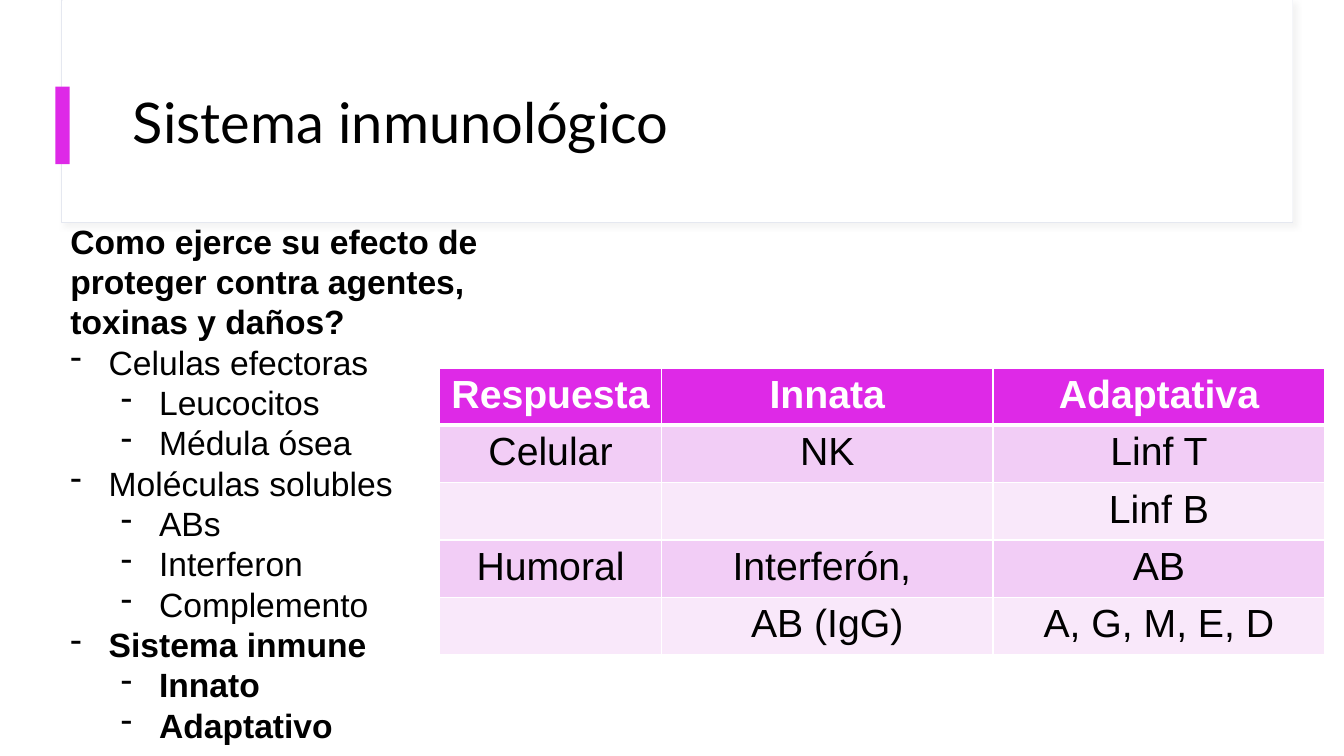
from lxml import etree
from pptx import Presentation
from pptx import util as u
from pptx.dml.color import RGBColor
from pptx.enum import shapes, text
from pptx.oxml import parse_xml
from pptx.oxml.ns import qn

COLORS = {
    "white": "FFFFFF", "black": "000000", "edge": "E5E8F0", "shade": "D9D9D9",
    "accent": "DE29E7", "dark": "F2CDF6", "light": "F9E8FA",
}
NS = 'xmlns:a="http://schemas.openxmlformats.org/drawingml/2006/main"'

# level, wording, bold
OUTLINE = [
    (None, "Como ejerce su efecto de proteger contra agentes, toxinas y daños?", True),
    (0, "Celulas efectoras", False),
    (1, "Leucocitos", False),
    (1, "Médula ósea", False),
    (0, "Moléculas solubles", False),
    (1, "ABs", False),
    (1, "Interferon", False),
    (1, "Complemento", False),
    (0, "Sistema inmune", True),
    (1, "Innato", True),
    (1, "Adaptativo", True),
]
ANSWERS = [
    ["Respuesta", "Innata", "Adaptativa"],
    ["Celular", "NK", "Linf T"],
    ["", "", "Linf B"],
    ["Humoral", "Interferón, ", "AB"],
    ["", "AB (IgG)", "A, G, M, E, D"],
]


def rgb(name):
    return RGBColor.from_string(COLORS[name])


class Deck:
    """Holds the presentation, its style and the current slide."""

    head, body = "Lato", "Arial"

    def __init__(self):
        self.prs = Presentation()
        self.prs.slide_width = u.Inches(13.33)
        self.prs.slide_height = u.Inches(7.5)
        self.slide = self.prs.slides.add_slide(self.prs.slide_layouts[6])

    def rect(self, at, fill, line=None, shade=False):
        box = self.slide.shapes.add_shape(
            shapes.MSO_SHAPE.RECTANGLE, *map(u.Inches, at))
        box.shadow.inherit = False
        box.fill.solid()
        box.fill.fore_color.rgb = rgb(fill)
        if line:
            box.line.color.rgb = rgb(line)
            box.line.width = u.Pt(0.75)
        else:
            box.line.fill.background()
        if shade:
            self.shade(box)

    def shade(self, box):
        """Put a soft shadow below and to the right of the box."""
        effects = box._element.spPr.find(qn("a:effectLst"))
        effects.append(parse_xml(
            f'<a:outerShdw {NS} blurRad="{u.Pt(4)}" dist="{u.Pt(3)}" dir="2700000">'
            f'<a:srgbClr val="{COLORS["shade"]}"><a:alpha val="30000"/></a:srgbClr>'
            '</a:outerShdw>'))

    def style(self, para, font, size, color="black", bold=False):
        for run in para.runs:
            run.font.name = font
            run.font.size = u.Pt(size)
            run.font.bold = bold
            run.font.color.rgb = rgb(color)

    def frame(self, at):
        box = self.slide.shapes.add_textbox(*map(u.Inches, at))
        box.text_frame.word_wrap = True
        return box.text_frame

    def title(self, at, words):
        frame = self.frame(at)
        frame.vertical_anchor = text.MSO_ANCHOR.MIDDLE
        frame.text = words
        para = frame.paragraphs[0]
        para.line_spacing = 0.9
        self.style(para, self.head, 40)

    def outline(self, at, items):
        frame = self.frame(at)
        frame.auto_size = text.MSO_AUTO_SIZE.SHAPE_TO_FIT_TEXT
        frame.text = "\n".join(words for _, words, _ in items)
        for para, (level, _, bold) in zip(frame.paragraphs, items):
            if level is not None:
                self.dash(para, level)
            self.style(para, self.body, 24, bold=bold)

    def dash(self, para, level):
        para.level = level
        props = para._p.get_or_add_pPr()
        props.set("marL", str(u.Inches(0.38 + 0.5 * level)))
        props.set("indent", str(u.Inches(-0.38)))
        etree.SubElement(props, qn("a:buChar")).set("char", "-")

    def table(self, at, cols, rows, data):
        grid = self.slide.shapes.add_table(
            len(data), len(cols), *map(u.Inches, at)).table
        for col, width in zip(grid.columns, cols):
            col.width = u.Inches(width)
        for row, height in zip(grid.rows, rows):
            row.height = u.Inches(height)
        for r, line in enumerate(data):
            fill = "accent" if r == 0 else "dark" if r % 2 else "light"
            for c, words in enumerate(line):
                cell = grid.cell(r, c)
                self.rule(cell, top=3 if r == 1 else 1, base=3 if r == 0 else 1)
                cell.fill.solid()
                cell.fill.fore_color.rgb = rgb(fill)
                cell.text_frame.text = words
                para = cell.text_frame.paragraphs[0]
                para.alignment = text.PP_ALIGN.CENTER
                self.style(para, self.body, 28,
                           "black" if r else "white", bold=r == 0)

    def rule(self, cell, top, base):
        """Draw white borders on all four sides of the cell."""
        props = cell._tc.get_or_add_tcPr()
        for side, width in zip("LRTB", (1, 1, top, base)):
            props.append(parse_xml(
                f'<a:ln{side} {NS} w="{u.Pt(width)}"><a:solidFill>'
                f'<a:srgbClr val="{COLORS["white"]}"/></a:solidFill></a:ln{side}>'))


def main():
    deck = Deck()
    deck.rect((0.61, 0, 12.21, 2.21), "white", line="edge", shade=True)
    deck.rect((0.62, 0, 12.2, 2.2), "white")
    deck.rect((0.55, 0.86, 0.14, 0.77), "accent")
    deck.title((1.22, 0.6, 11.12, 1.29), "Sistema inmunológico")
    deck.outline((0.6, 2.14, 4.66, 5.35), OUTLINE)
    deck.table((4.36, 3.65, 8.79, 2.83), (2.2, 3.29, 3.29),
               [0.55] + [0.57] * 4, ANSWERS)
    deck.prs.save("out.pptx")


if __name__ == "__main__":
    main()
